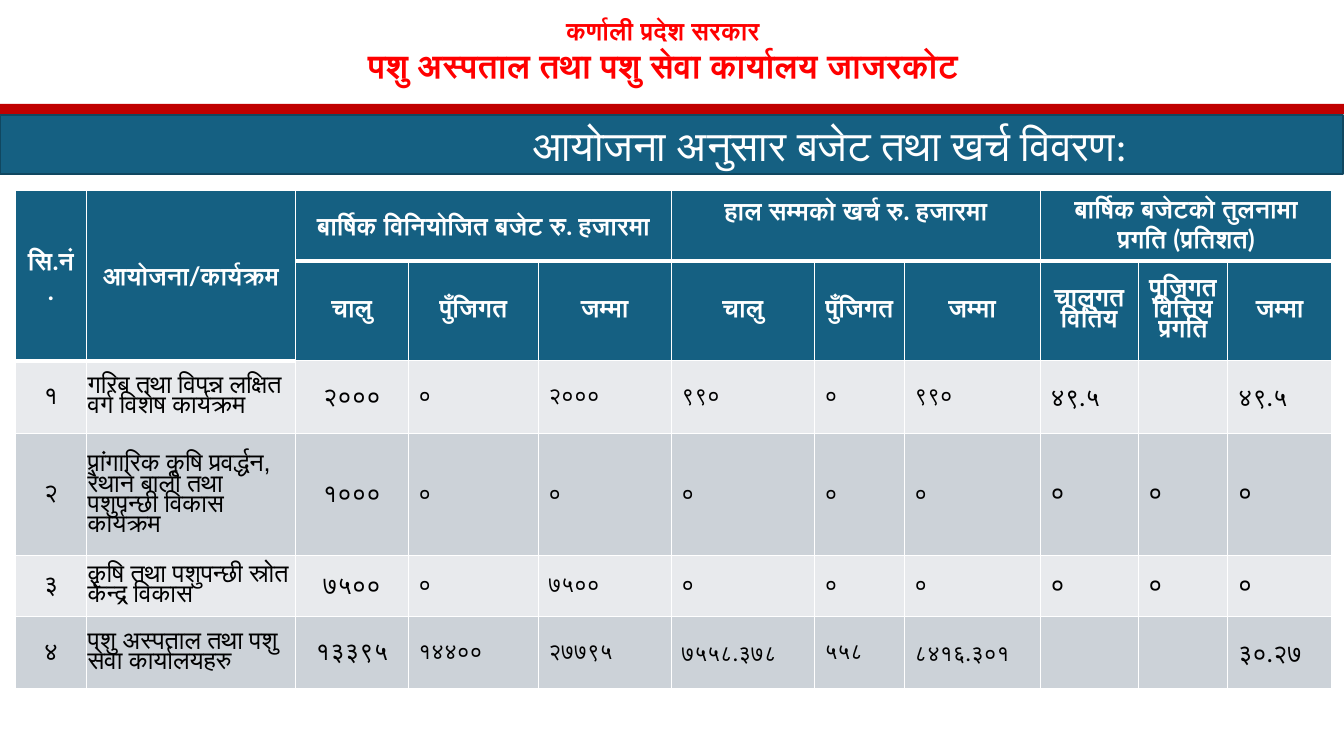
from dataclasses import dataclass
from typing import Optional

from lxml import etree
from pptx import Presentation
from pptx.dml.color import RGBColor
from pptx.enum.shapes import MSO_SHAPE
from pptx.enum.text import MSO_ANCHOR, PP_ALIGN
from pptx.oxml.ns import qn
from pptx.util import Inches, Pt

RECTANGLE = MSO_SHAPE.RECTANGLE
LEFT, CENTER = PP_ALIGN.LEFT, PP_ALIGN.CENTER
TOP, MIDDLE = MSO_ANCHOR.TOP, MSO_ANCHOR.MIDDLE


@dataclass(frozen=True)
class Theme:
    teal: str = "156082"
    teal_edge: str = "104760"
    rule_red: str = "C00000"
    office_red: str = "FF0000"
    white: str = "FFFFFF"
    black: str = "000000"
    bands: tuple = ("E8EAED", "CCD2D8")
    heading_font: str = "Lato"
    name_font: str = "Arial"
    title_font: str = "Calibri"
    title_size: int = 30
    office_size: int = 24
    table_size: int = 18
    amount_size: int = 16


THEME = Theme()


@dataclass(frozen=True)
class TextStyle:
    size: int
    color: str
    font: str = THEME.heading_font
    bold: bool = False
    align: PP_ALIGN = CENTER
    spacing: Optional[float] = None


@dataclass(frozen=True)
class HeaderCell:
    row: int
    column: int
    text: str
    row_span: int = 1
    column_span: int = 1
    anchor: MSO_ANCHOR = MIDDLE
    spacing: Optional[float] = None


COLUMN_WIDTHS = (0.71, 2.07, 1.12, 1.29, 1.32, 1.42, 0.89, 1.35, 0.97, 0.89, 1.03)
ROW_HEIGHTS = (0.7, 0.99, 0.72, 1.21, 0.61, 0.71)
GROUP_HEADERS = (
    HeaderCell(0, 0, "सि.नं.", row_span=2),
    HeaderCell(0, 1, "आयोजना/कार्यक्रम", row_span=2),
    HeaderCell(0, 2, "बार्षिक विनियोजित बजेट रु. हजारमा", column_span=3),
    HeaderCell(0, 5, "हाल सम्मको खर्च रु. हजारमा", column_span=3, anchor=TOP),
    HeaderCell(0, 8, "बार्षिक बजेटको तुलनामा प्रगति (प्रतिशत)", column_span=3),
)
SUB_HEADERS = ("चालु", "पुँजिगत", "जम्मा", "चालु", "पुँजिगत", "जम्मा",
               "चालुगत वितिय", "पुजिगत वित्तिय प्रगति", "जम्मा")
PROGRAMMES = (
    ("१", "गरिब तथा विपन्न लक्षित वर्ग विशेष कार्यक्रम",
     "२०००", "०", "२०००", "९९०", "०", "९९०", "४९.५", "", "४९.५"),
    ("२", "प्रांगारिक कृषि प्रवर्द्धन, रैथाने बाली तथा पशुपन्छी विकास कार्यक्रम",
     "१०००", "०", "०", "०", "०", "०", "०", "०", "०"),
    ("३", "कृषि तथा पशुपन्छी स्रोत केन्द्र विकास",
     "७५००", "०", "७५००", "०", "०", "०", "०", "०", "०"),
    ("४", "पशु अस्पताल तथा पशु सेवा कार्यालयहरु",
     "१३३९५", "१४४००", "२७७९५", "७५५८.३७८", "५५८", "८४१६.३०१", "", "", "३०.२७"),
)


def color(value: str) -> RGBColor:
    return RGBColor.from_string(value)


def write(paragraph, text: str, style: TextStyle) -> None:
    paragraph.text = text
    paragraph.alignment = style.align
    if style.spacing:
        paragraph.line_spacing = style.spacing
    paragraph.font.size = Pt(style.size)
    paragraph.font.bold = style.bold
    paragraph.font.name = style.font
    paragraph.font.color.rgb = color(style.color)


def set_borders(cell, bottom: float = 1) -> None:
    properties = cell._tc.get_or_add_tcPr()
    widths = {"a:lnL": 1, "a:lnR": 1, "a:lnT": 1, "a:lnB": bottom}
    for position, (tag, width) in enumerate(widths.items()):
        line = etree.Element(qn(tag), w=str(Pt(width)))
        fill = etree.SubElement(line, qn("a:solidFill"))
        etree.SubElement(fill, qn("a:srgbClr"), val=THEME.white)
        properties.insert(position, line)


def fill_cell(cell, text: str, fill: str, style: TextStyle,
              anchor: MSO_ANCHOR = MIDDLE, bottom: float = 1) -> None:
    cell.fill.solid()
    cell.fill.fore_color.rgb = color(fill)
    cell.vertical_anchor = anchor
    set_borders(cell, bottom)
    write(cell.text_frame.paragraphs[0], text, style)


def add_office_heading(slide) -> None:
    rule = slide.shapes.add_shape(RECTANGLE, 0, Inches(1.03), Inches(13.33), Inches(0.1))
    rule.shadow.inherit = False
    rule.fill.solid()
    rule.fill.fore_color.rgb = color(THEME.rule_red)
    rule.line.fill.background()

    box = slide.shapes.add_textbox(Inches(1.4), Inches(0.1), Inches(10.35), Inches(0.84))
    frame = box.text_frame
    frame.word_wrap = True
    write(frame.paragraphs[0], "कर्णाली प्रदेश सरकार",
          TextStyle(THEME.table_size, THEME.office_red, bold=True))
    write(frame.add_paragraph(), "पशु अस्पताल तथा पशु सेवा कार्यालय जाजरकोट",
          TextStyle(THEME.office_size, THEME.office_red, bold=True))


def format_title(slide) -> None:
    title = slide.shapes.title
    title.left, title.top = 0, Inches(1.14)
    title.width, title.height = Inches(13.32), Inches(0.59)
    title.fill.solid()
    title.fill.fore_color.rgb = color(THEME.teal)
    title.line.color.rgb = color(THEME.teal_edge)
    title.line.width = Pt(1.5)
    frame = title.text_frame
    frame.vertical_anchor = MIDDLE
    frame.margin_left = Inches(5.28)
    write(frame.paragraphs[0], "आयोजना अनुसार बजेट तथा खर्च विवरण:",
          TextStyle(THEME.title_size, THEME.white, THEME.title_font, align=LEFT))


def body_style(column: int) -> TextStyle:
    if column == 1:
        return TextStyle(THEME.table_size, THEME.black, THEME.name_font, align=LEFT, spacing=0.8)
    if column == 2:
        return TextStyle(THEME.table_size, THEME.black, THEME.name_font)
    size = THEME.amount_size if 3 <= column <= 7 else THEME.table_size
    return TextStyle(size, THEME.black, align=CENTER if column == 0 else LEFT)


def add_budget_table(slide) -> None:
    frame = slide.shapes.add_table(len(ROW_HEIGHTS), len(COLUMN_WIDTHS), Inches(0.15),
                                   Inches(1.89), Inches(13.07), Inches(sum(ROW_HEIGHTS)))
    table = frame.table
    for column, width in zip(table.columns, COLUMN_WIDTHS):
        column.width = Inches(width)
    for row, height in zip(table.rows, ROW_HEIGHTS):
        row.height = Inches(height)

    # Two header rows
    sub_headers = tuple(HeaderCell(1, column, text, spacing=0.8)
                        for column, text in enumerate(SUB_HEADERS, start=2))
    for header in GROUP_HEADERS + sub_headers:
        cell = table.cell(header.row, header.column)
        if header.row_span > 1 or header.column_span > 1:
            cell.merge(table.cell(header.row + header.row_span - 1,
                                  header.column + header.column_span - 1))
        style = TextStyle(THEME.table_size, THEME.white, bold=True, spacing=header.spacing)
        fill_cell(cell, header.text, THEME.teal, style, header.anchor,
                  bottom=3 if header.row == 0 else 1)

    # Programme rows in alternating bands
    for index, programme in enumerate(PROGRAMMES):
        for column, text in enumerate(programme):
            cell = table.cell(index + 2, column)
            fill_cell(cell, text, THEME.bands[index % 2], body_style(column))
            if column in (1, 2):
                cell.margin_left = cell.margin_right = cell.margin_top = Inches(0.01)
                cell.margin_bottom = 0


def main() -> None:
    presentation = Presentation()
    presentation.slide_width, presentation.slide_height = Inches(13.33), Inches(7.5)
    slide = presentation.slides.add_slide(presentation.slide_layouts[5])
    add_office_heading(slide)
    format_title(slide)
    add_budget_table(slide)
    presentation.save("out.pptx")


if __name__ == "__main__":
    main()
